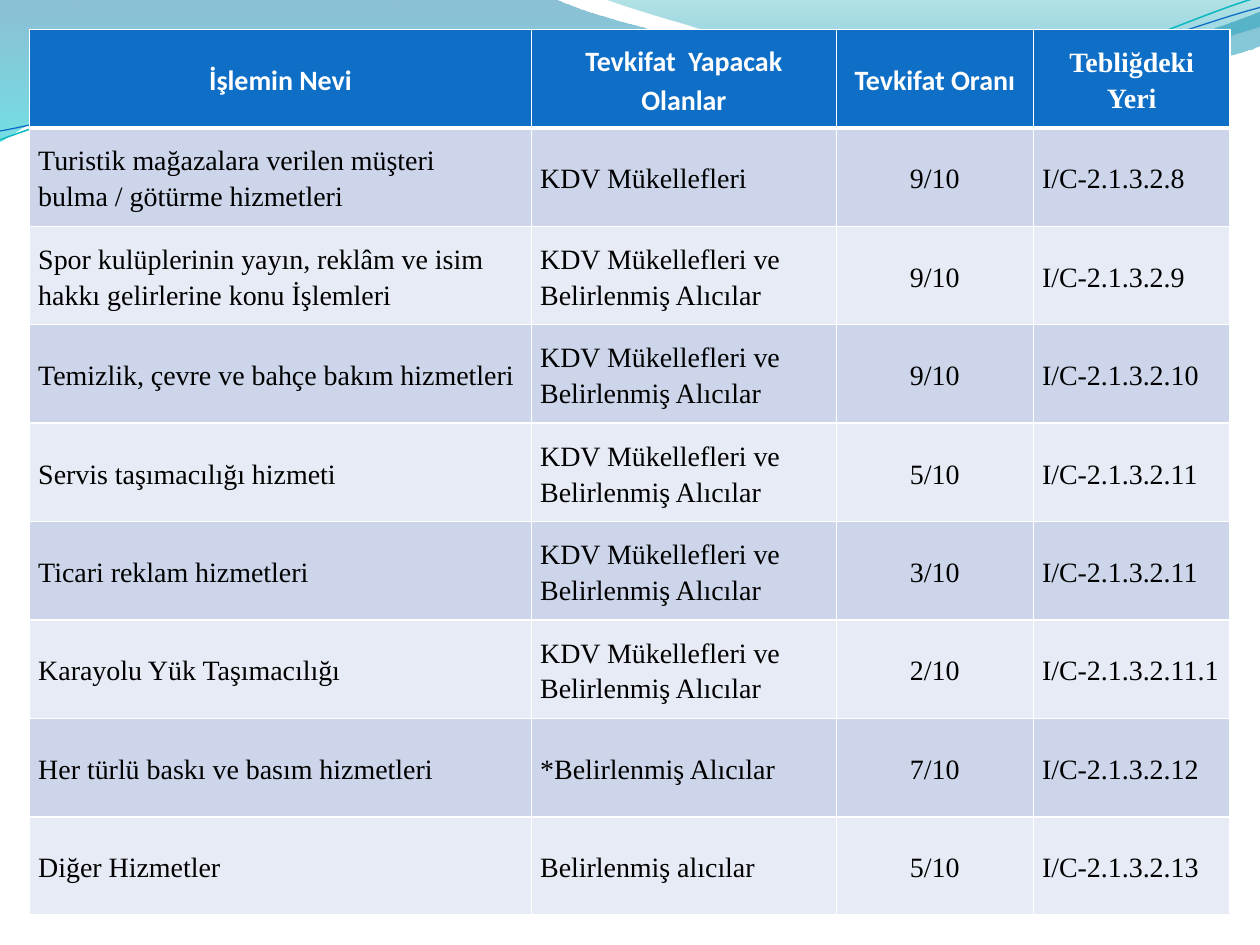
import math

from lxml import etree
from pptx import Presentation
from pptx import util as u
from pptx.dml.color import RGBColor
from pptx.enum import text
from pptx.oxml.ns import qn

# Lengths count units of a grid of 10 columns by 7.5 rows.
UNIT = u.Inches(1)
COLUMNS, ROWS = 10, 7.5
TABLE_HEIGHT = 7.03
# Shares of the slide's width, in percent.
MARGIN_SHARE = 2.34
COLUMN_SHARES = [39.84, 24.2, 15.63, 15.63]
TILT = -2.7

COLORS = {
    "header": "0F6FC6", "odd": "CCD5EA", "even": "E7EBF5",
    "white": "FFFFFF", "black": "000000",
    "deep": "0074A1", "aqua": "00C6CF", "teal": "00A1A9", "sky": "008BBF",
    "cyan line": "0AB8BF", "blue line": "0F6FC6",
}

BOTH = "KDV Mükellefleri ve Belirlenmiş Alıcılar"
HEADINGS = ["İşlemin Nevi", "Tevkifat  Yapacak Olanlar", "Tevkifat Oranı", "Tebliğdeki Yeri"]
SERVICES = [
    ["Turistik mağazalara verilen müşteri bulma / götürme hizmetleri ",
     "KDV Mükellefleri", "9/10", "I/C-2.1.3.2.8"],
    ["Spor kulüplerinin yayın, reklâm ve isim hakkı gelirlerine konu İşlemleri",
     BOTH, "9/10", "I/C-2.1.3.2.9"],
    ["Temizlik, çevre ve bahçe bakım hizmetleri", BOTH, "9/10", "I/C-2.1.3.2.10"],
    ["Servis taşımacılığı hizmeti ", BOTH, "5/10", "I/C-2.1.3.2.11"],
    ["Ticari reklam hizmetleri", BOTH, "3/10", "I/C-2.1.3.2.11"],
    ["Karayolu Yük Taşımacılığı", BOTH, "2/10", "I/C-2.1.3.2.11.1"],
    ["Her türlü baskı ve basım hizmetleri ", "*Belirlenmiş Alıcılar", "7/10", "I/C-2.1.3.2.12"],
    ["Diğer Hizmetler", "Belirlenmiş alıcılar", "5/10", "I/C-2.1.3.2.13"],
]

# A step of two numbers is a straight line, one of six is a cubic curve.
LEFT_WAVE = [
    (0, 0), (4.4, -0.01), (4.76, 0.17, 6.64, 0.63, 7.58, 0.63),
    (8.53, 0.63, 9.58, 0.26, 10, 0.09), (10.01, 0.36),
    (9.83, 0.44, 8.7, 0.76, 7.46, 0.75), (6.22, 0.75, 3.82, 0.28, 2.57, 0.34),
    (1.29, 0.36, 0.46, 0.83, -0.01, 1.13),
]
RIGHT_WAVE = [
    (4.79, -0.01), (5.09, 0.11, 6.82, 0.62, 7.69, 0.65),
    (8.56, 0.69, 9.61, 0.32, 10, 0.21), (10, 0),
]
CYAN_CURVE = [
    (0, 1.11), (0.48, 0.93, 1.58, 0.57, 2.77, 0.52),
    (3.95, 0.47, 5.93, 0.89, 7.13, 0.8), (8.33, 0.71, 9.38, 0.15, 9.98, -0.02),
]
BLUE_CURVE = [
    (0, 1.04), (0.47, 0.96, 1.64, 0.61, 2.83, 0.56),
    (4.03, 0.51, 5.97, 0.84, 7.17, 0.75), (8.36, 0.67, 9.41, 0.21, 10, 0.06),
]


def color(name):
    return RGBColor.from_string(COLORS[name])


def units(count):
    return round(count * UNIT)


def width_share(percent):
    return units(COLUMNS * percent / 100)


def pairs(step):
    return list(zip(step[::2], step[1::2]))


def level(steps, center):
    """Undo the tilt of the steps, turning them around the center."""
    cosine, sine = math.cos(math.radians(-TILT)), math.sin(math.radians(-TILT))
    levelled = []
    for step in steps:
        moved = [(x - center[0], y - center[1]) for x, y in pairs(step)]
        levelled.append(tuple(value for x, y in moved for value in (
            center[0] + x * cosine - y * sine, center[1] + x * sine + y * cosine)))
    return levelled


def add_outline(slide, steps, close):
    """Add a freeform through the ends of the steps, then bend its cubic ones."""
    ends = [(units(step[-2]), units(step[-1])) for step in steps]
    builder = slide.shapes.build_freeform(*ends[0])
    builder.add_line_segments(ends[1:], close=close)
    shape = builder.convert_to_shape()
    shape.shadow.inherit = False
    segments = list(shape._element.spPr.iter(qn("a:lnTo")))
    for segment, step in zip(segments, steps[1:]):
        if len(step) == 2:
            continue
        curve = etree.Element(qn("a:cubicBezTo"))
        for x, y in pairs(step):
            etree.SubElement(curve, qn("a:pt"), x=str(units(x) - shape.left),
                             y=str(units(y) - shape.top))
        segment.getparent().replace(segment, curve)
    return shape


def add_wave(slide, steps, stops):
    """Add a filled wave; each stop is a position, a colour name and an opacity in percent."""
    shape = add_outline(slide, steps, True)
    shape.line.fill.background()
    shape.fill.gradient()
    shape.fill.gradient_angle = 270
    for stop, (position, name, _) in zip(shape.fill.gradient_stops, stops):
        stop.position = position
        stop.color.rgb = color(name)
    for element, stop in zip(shape._element.spPr.iter(qn("a:srgbClr")), stops):
        etree.SubElement(element, qn("a:alpha"), val=str(stop[2] * 1000))


def add_curve(slide, steps, center, name, width):
    shape = add_outline(slide, level(steps, center), False)
    shape.rotation = TILT
    shape.fill.background()
    shape.line.color.rgb = color(name)
    shape.line.width = u.Pt(width)


def set_borders(cell, top, bottom):
    properties = cell._tc.get_or_add_tcPr()
    for side, width in (("L", 1), ("R", 1), ("T", top), ("B", bottom)):
        line = etree.SubElement(properties, qn("a:ln" + side), w=str(u.Pt(width)))
        fill = etree.SubElement(line, qn("a:solidFill"))
        etree.SubElement(fill, qn("a:srgbClr"), val=COLORS["white"])


def fill_cell(cell, words, row, column):
    is_header = row == 0
    set_borders(cell, 3 if row == 1 else 1, 3 if is_header else 1)
    cell.fill.solid()
    cell.fill.fore_color.rgb = color("header" if is_header else "odd" if row % 2 else "even")
    cell.vertical_anchor = text.MSO_ANCHOR.MIDDLE
    cell.margin_left = cell.margin_right = units(0.07)
    cell.margin_top = cell.margin_bottom = 0
    cell.text = words
    paragraph = cell.text_frame.paragraphs[0]
    paragraph.line_spacing = 1.15
    centred = is_header or column == 2
    paragraph.alignment = text.PP_ALIGN.CENTER if centred else text.PP_ALIGN.LEFT
    font = paragraph.font
    font.name = "Calibri" if is_header and column < 3 else "Times New Roman"
    font.size = u.Pt(16)
    font.bold = is_header
    font.color.rgb = color("white" if is_header else "black")


def add_services_table(slide):
    rows = [HEADINGS] + SERVICES
    margin = width_share(MARGIN_SHARE)
    table = slide.shapes.add_table(
        len(rows), len(HEADINGS), margin, margin,
        width_share(sum(COLUMN_SHARES)), units(TABLE_HEIGHT)).table
    for column, share in zip(table.columns, COLUMN_SHARES):
        column.width = width_share(share)
    for row, texts in enumerate(rows):
        table.rows[row].height = units(TABLE_HEIGHT / len(rows))
        for column, words in enumerate(texts):
            fill_cell(table.cell(row, column), words, row, column)


def main():
    presentation = Presentation()
    presentation.slide_width = units(COLUMNS)
    presentation.slide_height = units(ROWS)
    slide = presentation.slides.add_slide(presentation.slide_layouts[6])
    add_wave(slide, LEFT_WAVE, [(0, "deep", 45), (1, "aqua", 55)])
    add_wave(slide, RIGHT_WAVE, [(0, "teal", 30), (0.8, "sky", 45)])
    add_curve(slide, CYAN_CURVE, (4.99, 0.58), "cyan line", 0.85)
    add_curve(slide, BLUE_CURVE, (5, 0.59), "blue line", 0.75)
    add_services_table(slide)
    presentation.save("out.pptx")


if __name__ == "__main__":
    main()
